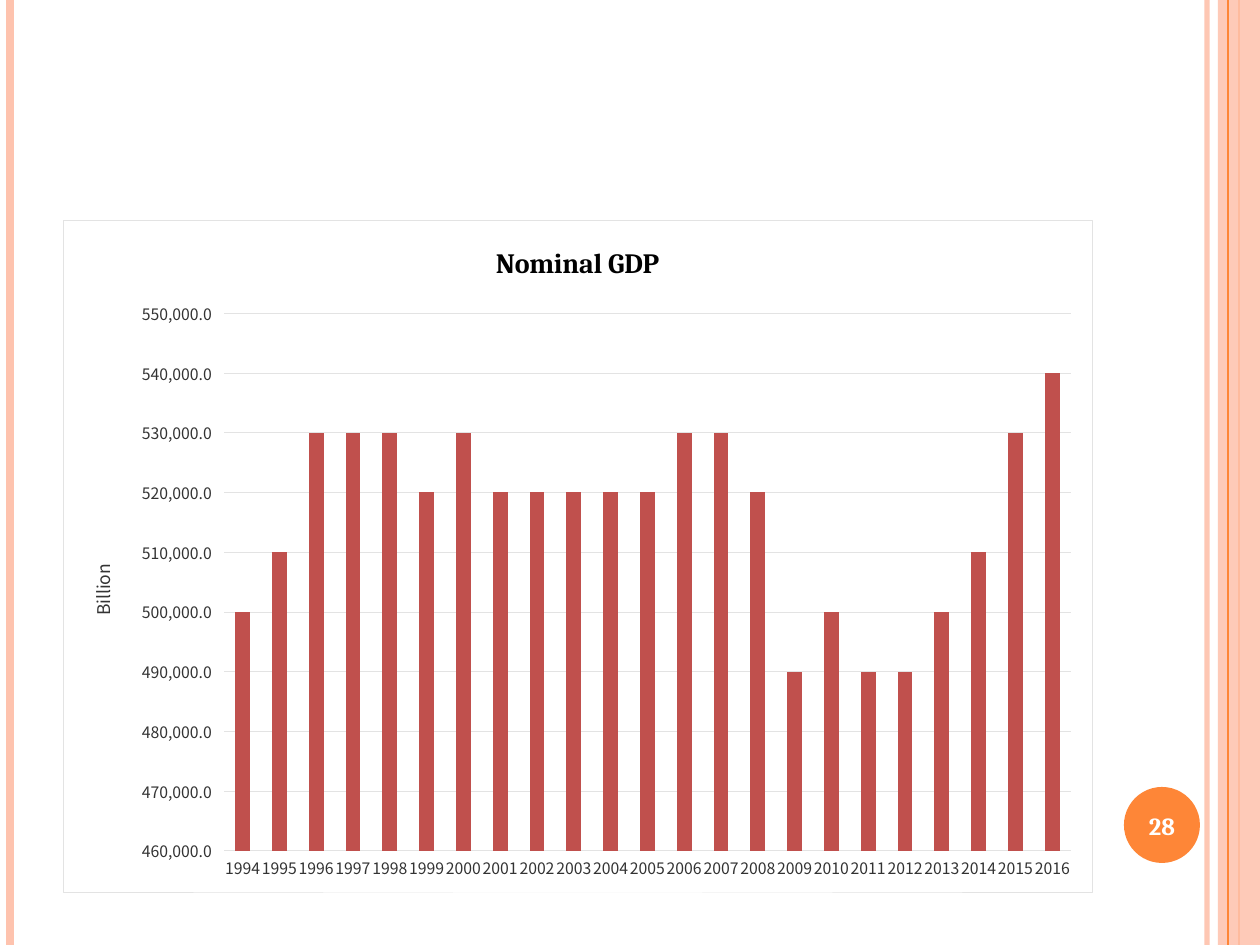
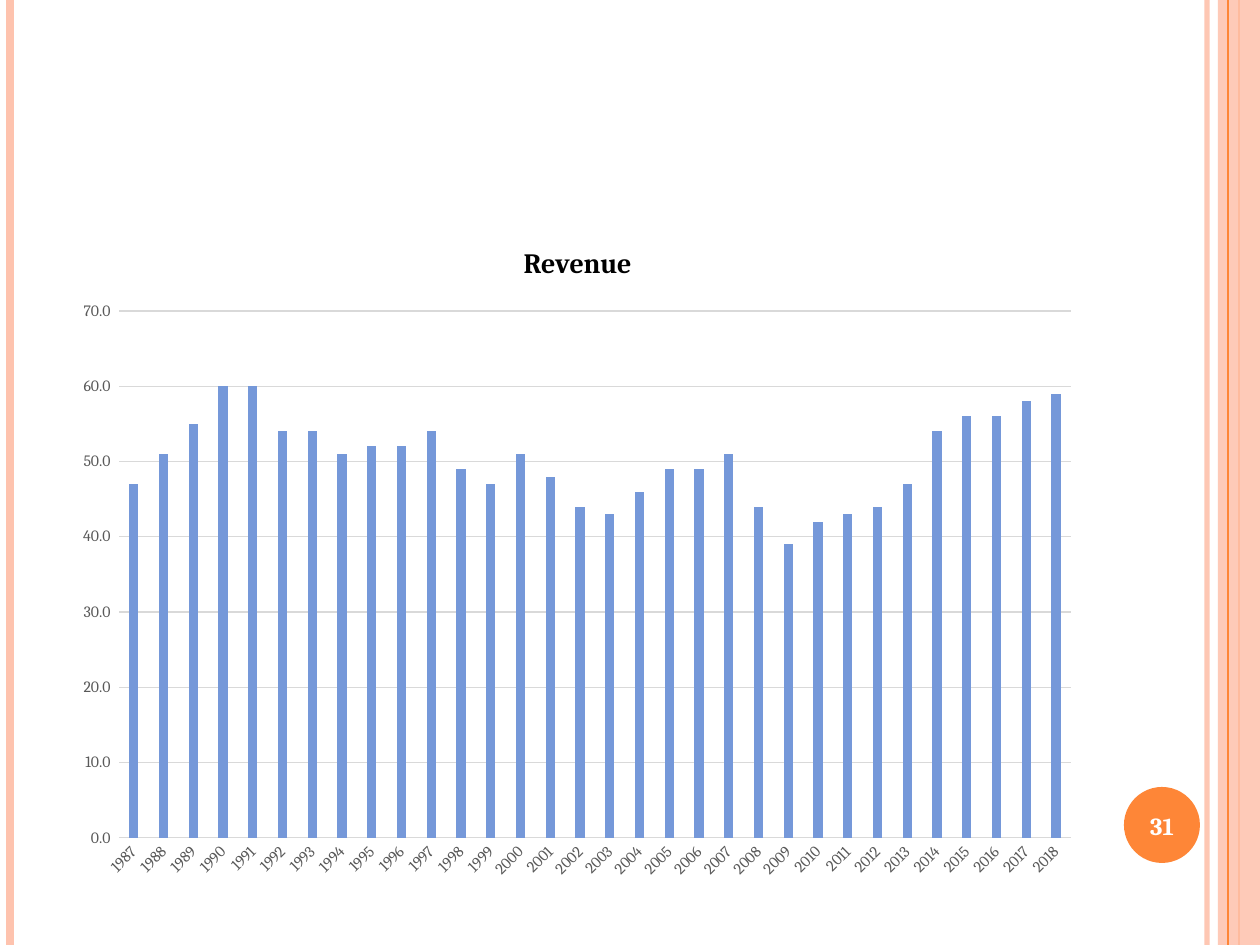
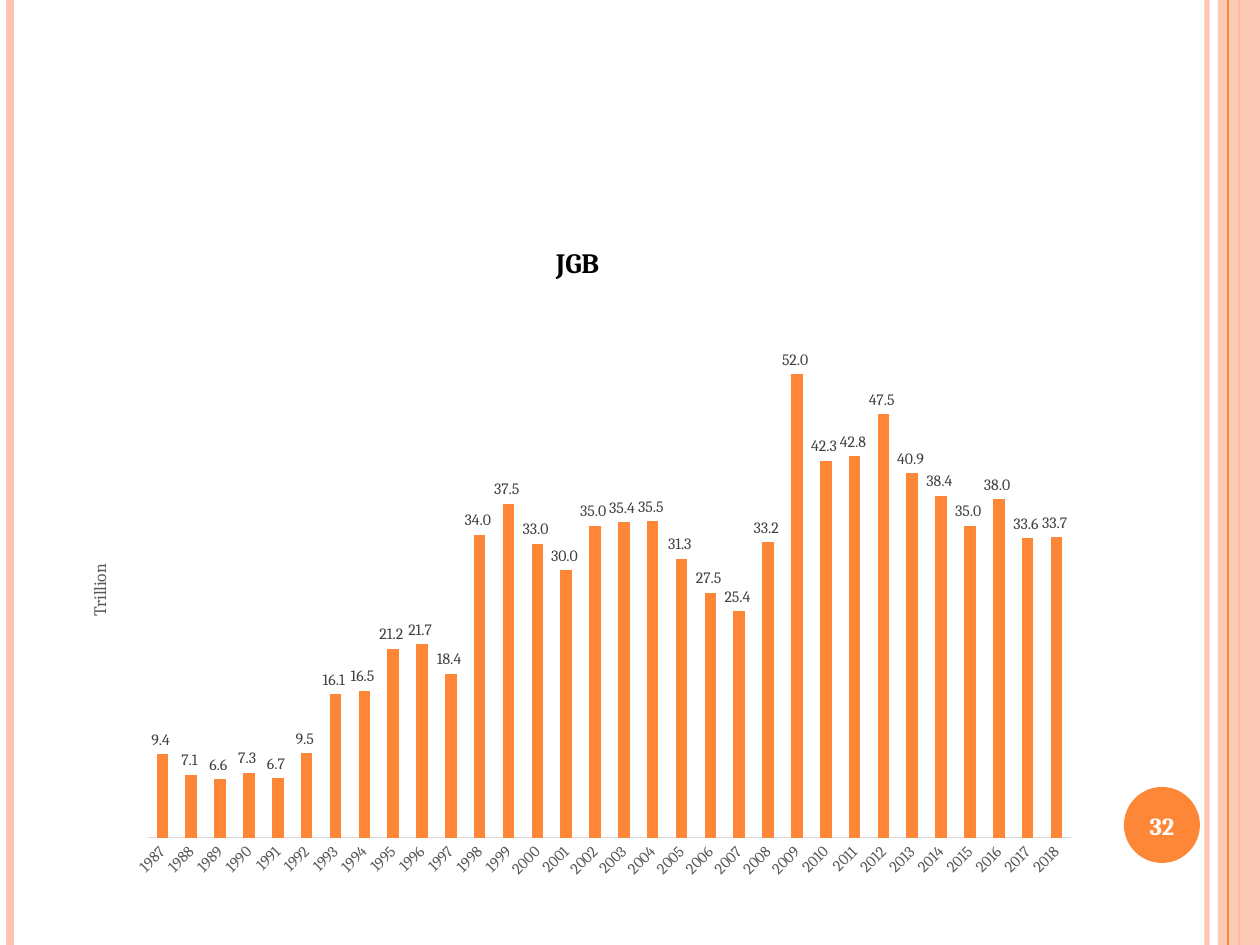
from dataclasses import dataclass
from typing import NamedTuple, Optional

from lxml.etree import SubElement
from pptx import Presentation
from pptx.chart.data import CategoryChartData as Data
from pptx.dml.color import RGBColor as RGB
from pptx.enum.chart import XL_CHART_TYPE as Kind
from pptx.enum.chart import XL_LABEL_POSITION as Place
from pptx.enum.chart import XL_TICK_MARK as Tick
from pptx.enum.shapes import MSO_CONNECTOR as Link
from pptx.enum.shapes import MSO_SHAPE as Form
from pptx.enum.text import MSO_ANCHOR as Anchor
from pptx.enum.text import PP_ALIGN as Align
from pptx.oxml import parse_xml
from pptx.oxml.ns import nsdecls, qn
from pptx.util import Emu, Pt

WHITE = RGB(0xFF, 0xFF, 0xFF)
BLACK = RGB(0x00, 0x00, 0x00)
PEACH = RGB(0xFE, 0xC3, 0xAE)
ORANGE = RGB(0xFE, 0x86, 0x37)
BLUE = RGB(0x75, 0x98, 0xD9)
RED = RGB(0xC0, 0x50, 0x4D)
DARK = RGB(0x33, 0x33, 0x33)
SLATE = RGB(0x40, 0x40, 0x40)
GRAY = RGB(0x59, 0x59, 0x59)
PALE = RGB(0xD9, 0xD9, 0xD9)
FAINT = RGB(0xE3, 0xE3, 0xE3)
SERIF = "Cambria"
SANS = "Noto Sans CJK JP"
SCALE = 914400 / 126
WIDE, HIGH = 1260, 945


class Box(NamedTuple):
    x: int
    y: int
    w: int
    h: int


class Stripe(NamedTuple):
    x: int
    color: RGB
    width: float
    alpha: int = 100


FRAME = Box(63, 220, 1029, 672)
BAND = Box(1218, 0, 42, HIGH)
DISC = Box(1124, 787, 76, 76)
LABEL = Box(1120, 790, 84, 72)
BACK = [Stripe(1207, PEACH, 3, 93), Stripe(10, PEACH, 4.5), Stripe(1239, ORANGE, 1.5)]
FRONT = Stripe(1228, ORANGE, 0.75)


@dataclass
class Graph:
    page: int
    title: str
    start: int
    vals: list[float]
    color: RGB
    plot: Box
    low: float
    high: float
    step: float
    form: str = "0.0_ "
    unit: str = ""
    gap: int = 150
    overlap: int = 0
    turn: int = -45
    font: str = SERIF
    ink: RGB = GRAY
    rule: RGB = PALE
    thick: float = 0.75
    tick: Tick = Tick.NONE
    border: Optional[RGB] = None
    labels: bool = False


GRAPHS = [
    Graph(28, "Nominal GDP", 1994,
          [500000, 510000, 530000, 530000, 530000, 520000, 530000, 520000,
           520000, 520000, 520000, 520000, 530000, 530000, 520000, 490000,
           500000, 490000, 490000, 500000, 510000, 530000, 540000],
          RED, Box(224, 313, 847, 538), 460000, 550000, 10000,
          form="#,##0.0", unit="Billion", turn=0, font=SANS,
          ink=DARK, rule=FAINT, thick=0.25, tick=Tick.OUTSIDE, border=FAINT),
    Graph(31, "Revenue", 1987,
          [47, 51, 55, 60, 60, 54, 54, 51, 52, 52, 54, 49, 47, 51, 48, 44,
           43, 46, 49, 49, 51, 44, 39, 42, 43, 44, 47, 54, 56, 56, 58, 59],
          BLUE, Box(119, 311, 952, 527), 0, 70, 10, gap=219, overlap=-27),
    Graph(32, "JGB", 1987,
          [9.4, 7.1, 6.6, 7.3, 6.7, 9.5, 16.1, 16.5, 21.2, 21.7, 18.4, 34,
           37.5, 33, 30, 35, 35.4, 35.5, 31.3, 27.5, 25.4, 33.2, 52,
           42.3, 42.8, 47.5, 40.9, 38.4, 35, 38, 33.6, 33.7],
          ORANGE, Box(148, 303, 923, 535), 0, 60, 10, unit="Trillion",
          overlap=-25, labels=True),
]


def px(n: int) -> Emu:
    return Emu(round(n * SCALE))


def place(box: Box) -> list[Emu]:
    return [px(n) for n in box]


def style(font, name: str, size: float, color: RGB, bold: bool = False) -> None:
    font.name = name
    font.size = Pt(size)
    font.bold = bold
    font.color.rgb = color


def fade(shape, alpha: int) -> None:
    if alpha < 100:
        for node in shape._element.spPr.iter(qn("a:srgbClr")):
            SubElement(node, qn("a:alpha"), val=str(alpha * 1000))


def add_stripe(slide, item: Stripe) -> None:
    line = slide.shapes.add_connector(Link.STRAIGHT, px(item.x), 0, px(item.x), px(HIGH))
    line.line.color.rgb = item.color
    line.line.width = Pt(item.width)
    fade(line, item.alpha)
    SubElement(line._element.spPr, qn("a:effectLst"))


def add_solid(slide, form: Form, box: Box, color: RGB, alpha: int = 100) -> None:
    shape = slide.shapes.add_shape(form, *place(box))
    shape.shadow.inherit = False
    shape.fill.solid()
    shape.fill.fore_color.rgb = color
    shape.line.fill.background()
    fade(shape, alpha)


def add_decor(slide, page: int) -> None:
    for item in BACK:
        add_stripe(slide, item)
    add_solid(slide, Form.RECTANGLE, BAND, PEACH, 87)
    add_stripe(slide, FRONT)
    add_solid(slide, Form.OVAL, DISC, ORANGE)
    frame = slide.shapes.add_textbox(*place(LABEL)).text_frame
    frame.word_wrap = True
    frame.vertical_anchor = Anchor.MIDDLE
    para = frame.paragraphs[0]
    para.alignment = Align.CENTER
    run = para.add_run()
    run.text = str(page)
    style(run.font, SERIF, 14, WHITE, True)


def add_title(owner, text: str, name: str, size: float, color: RGB, bold: bool = False) -> None:
    run = owner.text_frame.paragraphs[0].add_run()
    run.text = text
    style(run.font, name, size, color, bold)


def set_frame(chart, border: Optional[RGB], thick: float) -> None:
    paint = f'<a:solidFill><a:srgbClr val="{border}"/></a:solidFill>' if border else "<a:noFill/>"
    node = parse_xml(
        f'<c:spPr {nsdecls("c", "a")}><a:solidFill><a:srgbClr val="{WHITE}"/></a:solidFill>'
        f'<a:ln w="{Pt(thick)}">{paint}</a:ln></c:spPr>')
    chart._chartSpace.find(qn("c:chart")).addnext(node)


def set_plot(chart, box: Box) -> None:
    area = chart._chartSpace.find(qn("c:chart")).find(qn("c:plotArea"))
    old = area.find(qn("c:layout"))
    if old is not None:
        area.remove(old)
    parts = {"x": (box.x - FRAME.x) / FRAME.w, "y": (box.y - FRAME.y) / FRAME.h,
             "w": box.w / FRAME.w, "h": box.h / FRAME.h}
    sizes = "".join(f'<c:{key} val="{val:.4f}"/>' for key, val in parts.items())
    area.insert(0, parse_xml(
        f'<c:layout {nsdecls("c")}><c:manualLayout><c:layoutTarget val="inner"/>'
        f'<c:xMode val="edge"/><c:yMode val="edge"/>{sizes}</c:manualLayout></c:layout>'))


def set_turn(body, angle: int) -> None:
    body.set("rot", str(angle * 60000))
    body.set("vert", "horz")


def set_axes(chart, graph: Graph) -> None:
    years, scale = chart.category_axis, chart.value_axis
    for axis in (years, scale):
        axis.minor_tick_mark = Tick.NONE
        style(axis.tick_labels.font, graph.font, 9, graph.ink)
    years.major_tick_mark = Tick.NONE
    years.format.line.color.rgb = graph.rule
    years.format.line.width = Pt(graph.thick)
    set_turn(years._element.find(qn("c:txPr")).find(qn("a:bodyPr")), graph.turn)
    scale.major_tick_mark = graph.tick
    scale.minimum_scale, scale.maximum_scale = graph.low, graph.high
    scale.major_unit = graph.step
    scale.tick_labels.number_format = graph.form
    scale.tick_labels.number_format_is_linked = False
    scale.format.line.fill.background()
    scale.visible = not graph.labels
    scale.has_major_gridlines = not graph.labels
    if scale.has_major_gridlines:
        grid = scale.major_gridlines.format.line
        grid.color.rgb = graph.rule
        grid.width = Pt(graph.thick)
    if graph.unit:
        add_title(scale.axis_title, graph.unit, graph.font, 10, graph.ink)
        set_turn(scale.axis_title.text_frame._txBody.find(qn("a:bodyPr")), -90)


def add_graph(slide, graph: Graph) -> None:
    data = Data(number_format=graph.form)
    data.categories = [str(graph.start + i) for i in range(len(graph.vals))]
    data.add_series("Series 1", graph.vals)
    chart = slide.shapes.add_chart(Kind.COLUMN_CLUSTERED, *place(FRAME), data).chart
    style(chart.font, graph.font, 10, BLACK)
    chart.has_legend = False
    chart.has_title = True
    add_title(chart.chart_title, graph.title, SERIF, 16, BLACK, True)
    chart.chart_title.include_in_layout = False
    set_frame(chart, graph.border, graph.thick)
    set_plot(chart, graph.plot)
    set_axes(chart, graph)
    plot = chart.plots[0]
    plot.vary_by_categories = False
    plot.gap_width = graph.gap
    plot.overlap = graph.overlap
    bars = plot.series[0].format
    bars.fill.solid()
    bars.fill.fore_color.rgb = graph.color
    if graph.labels:
        plot.has_data_labels = True
        tags = plot.data_labels
        tags.show_value = True
        tags.position = Place.OUTSIDE_END
        tags.number_format = graph.form
        tags.number_format_is_linked = False
        style(tags.font, graph.font, 9, SLATE)


def main() -> None:
    deck = Presentation()
    deck.slide_width, deck.slide_height = px(WIDE), px(HIGH)
    for graph in GRAPHS:
        slide = deck.slides.add_slide(deck.slide_layouts[6])
        add_decor(slide, graph.page)
        add_graph(slide, graph)
    deck.save("out.pptx")


if __name__ == "__main__":
    main()
